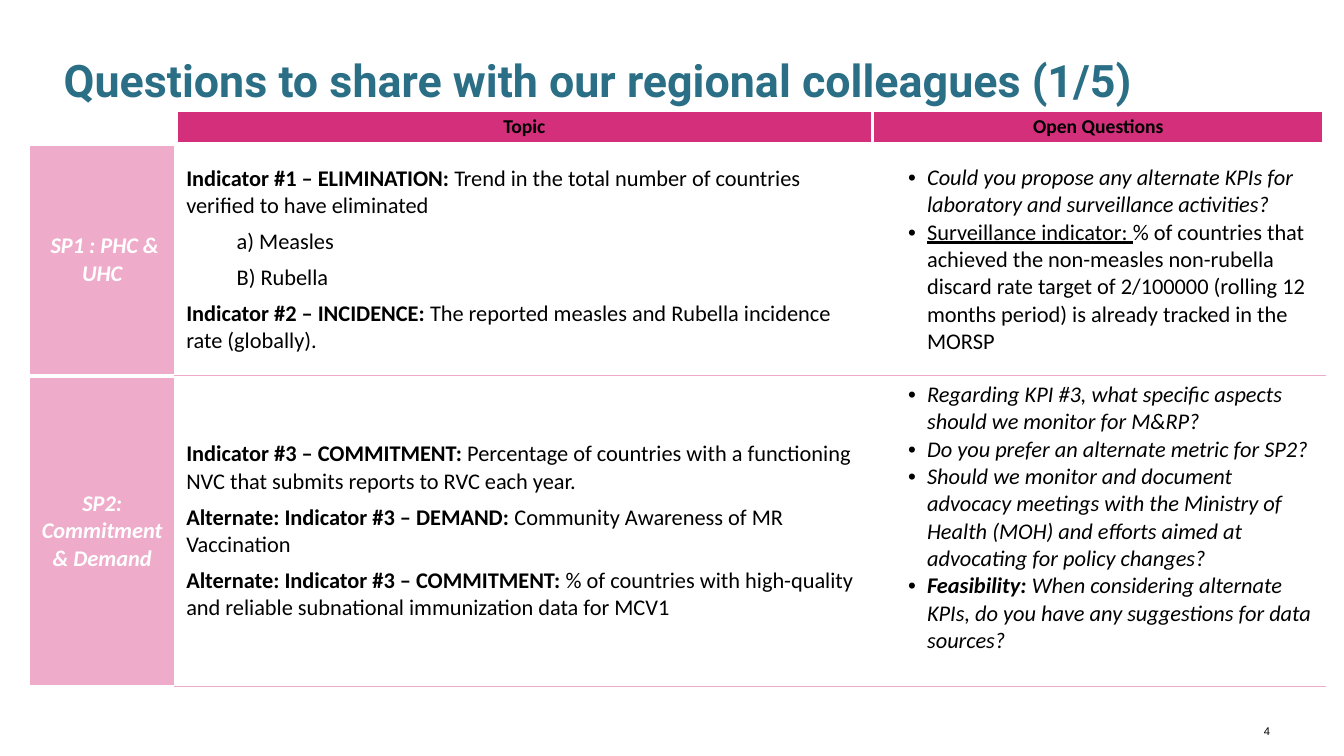
from dataclasses import dataclass
from lxml import etree
from pptx import Presentation
from pptx.dml.color import RGBColor
from pptx.enum.text import MSO_ANCHOR, MSO_AUTO_SIZE, PP_ALIGN
from pptx.oxml.ns import qn
from pptx.util import Cm, Pt

LEFT, CENTER, RIGHT = PP_ALIGN.LEFT, PP_ALIGN.CENTER, PP_ALIGN.RIGHT
MIDDLE, BOTTOM = MSO_ANCHOR.MIDDLE, MSO_ANCHOR.BOTTOM
NO_FIT = MSO_AUTO_SIZE.NONE

TITLE = "Questions to share with our regional colleagues (1/5)"
PAGE_NUMBER = "4"
HEADERS = ["Topic", "Open Questions"]
ROWS = [
    {
        "label": " SP1 : PHC & UHC",
        "topics": [
            (0, [("Indicator #1 – ELIMINATION: ", "b"),
                 ("Trend in the total number of countries verified to have eliminated", "")]),
            (1, [("a) Measles", "")]),
            (1, [("B) Rubella", "")]),
            (0, [("Indicator #2 – INCIDENCE: ", "b"),
                 ("The reported measles and Rubella incidence rate (globally).", "")]),
        ],
        "questions": [
            [("Could you propose any alternate KPIs for laboratory and surveillance activities?", "i")],
            [("Surveillance indicator: ", "u"),
             ("% of countries that achieved the non-measles non-rubella discard rate target of "
              "2/100000 (rolling 12 months period) is already tracked in the MORSP", "")],
        ],
    },
    {
        "label": "SP2: Commitment & Demand",
        "topics": [
            (0, [("Indicator #3 – COMMITMENT: ", "b"),
                 ("Percentage of countries with a functioning  NVC that submits reports to RVC each year.", "")]),
            (0, [("Alternate: Indicator #3 – DEMAND: ", "b"),
                 ("Community Awareness of MR Vaccination", "")]),
            (0, [("Alternate: Indicator #3 – COMMITMENT: ", "b"),
                 ("% of countries with high-quality and reliable subnational immunization data for MCV1", "")]),
        ],
        "questions": [
            [("Regarding KPI #3, what specific aspects should we monitor for M&RP?", "i")],
            [("Do you prefer an alternate metric for SP2?", "i")],
            [("Should we monitor and document advocacy meetings with the Ministry of Health (MOH) "
              "and efforts aimed at advocating for policy changes?", "i")],
            [("Feasibility: ", "bi"),
             ("When considering alternate KPIs, do you have any suggestions for data sources?", "i")],
        ],
    },
]


@dataclass(frozen=True)
class Theme:
    title: str = "2B6F86"
    header: str = "D42F7B"
    label: str = "EEACCA"
    text: str = "000000"
    white: str = "FFFFFF"
    title_font: str = "Roboto"
    body_font: str = "Calibri"
    number_font: str = "Arial"
    title_size: int = 32
    header_size: int = 14
    body_size: int = 16
    number_size: int = 8


T = Theme()
WHITE_LINE, PINK_LINE = (T.white, 3), (T.label, 1)
COLUMNS = [Cm(3.73), Cm(17.55), Cm(11.38)]
HEIGHTS = [Cm(0.86), Cm(5.84), Cm(7.82)]


def add_run(p, text, marks="", size=T.body_size, color=T.text, font=T.body_font):
    r = p.add_run()
    r.text = text
    f = r.font
    f.name, f.size = font, Pt(size)
    f.color.rgb = RGBColor.from_string(color)
    f.bold, f.italic, f.underline = "b" in marks, "i" in marks, "u" in marks


def next_paragraph(tf, first):
    return tf.paragraphs[0] if first else tf.add_paragraph()


def indent(p, left, hanging=0, bullet=False):
    pPr = p._p.get_or_add_pPr()
    pPr.set("marL", str(left))
    pPr.set("indent", str(-hanging))
    if bullet:
        etree.SubElement(pPr, qn("a:buFont")).set("typeface", "Arial")
        etree.SubElement(pPr, qn("a:buChar")).set("char", "•")


def style_cell(cell, fill=None, top=WHITE_LINE, bottom=WHITE_LINE):
    cell.vertical_anchor = MIDDLE
    if fill:
        cell.fill.solid()
        cell.fill.fore_color.rgb = RGBColor.from_string(fill)
    else:
        cell.fill.background()
    tcPr = cell._tc.get_or_add_tcPr()
    sides = {"L": WHITE_LINE, "R": WHITE_LINE, "T": top, "B": bottom}
    for i, (side, (color, width)) in enumerate(sides.items()):
        ln = etree.Element(qn(f"a:ln{side}"), w=str(Pt(width)))
        solid = etree.SubElement(ln, qn("a:solidFill"))
        etree.SubElement(solid, qn("a:srgbClr")).set("val", color)
        tcPr.insert(i, ln)


def fill_centered(cell, text, fill, **style):
    style_cell(cell, fill)
    p = cell.text_frame.paragraphs[0]
    p.alignment = CENTER
    add_run(p, text, **style)


def fill_topics(cell, topics):
    for i, (level, runs) in enumerate(topics):
        p = next_paragraph(cell.text_frame, i == 0)
        p.level = level
        p.space_after = Pt(6)
        indent(p, Cm(1.27) * level)
        for text, marks in runs:
            add_run(p, text, marks)


def fill_questions(cell, questions):
    for i, runs in enumerate(questions):
        p = next_paragraph(cell.text_frame, i == 0)
        indent(p, Cm(1.12), Cm(0.48), bullet=True)
        for text, marks in runs:
            add_run(p, text, marks)


def add_title(s):
    sp = s.shapes.title
    sp.left, sp.top, sp.width, sp.height = Cm(1.35), Cm(1.8), Cm(30.86), Cm(1.04)
    tf = sp.text_frame
    tf.word_wrap, tf.auto_size, tf.vertical_anchor = True, NO_FIT, BOTTOM
    p = tf.paragraphs[0]
    p.alignment, p.line_spacing = LEFT, 0.9
    add_run(p, TITLE, "b", T.title_size, T.title, T.title_font)


def add_questions_table(s):
    table = s.shapes.add_table(len(HEIGHTS), len(COLUMNS), Cm(0.71), Cm(2.77),
                               sum(COLUMNS), sum(HEIGHTS)).table
    table.horz_banding = False
    for column, width in zip(table.columns, COLUMNS):
        column.width = width
    for row, height in zip(table.rows, HEIGHTS):
        row.height = height

    corner = table.cell(0, 0)
    style_cell(corner)
    corner.margin_top = corner.margin_bottom = 0
    for c, text in enumerate(HEADERS, 1):
        fill_centered(table.cell(0, c), text, T.header, marks="b", size=T.header_size)

    for r, row in enumerate(ROWS, 1):
        label, topics, questions = (table.cell(r, c) for c in range(3))
        fill_centered(label, row["label"], T.label, marks="bi", color=T.white)
        for cell in (topics, questions):
            style_cell(cell, top=WHITE_LINE if r == 1 else PINK_LINE, bottom=PINK_LINE)
        fill_topics(topics, row["topics"])
        fill_questions(questions, row["questions"])
    questions.margin_bottom = Cm(0.8)


def add_page_number(s):
    tf = s.shapes.add_textbox(Cm(31.55), Cm(18.14), Cm(0.71), Cm(0.58)).text_frame
    tf.word_wrap, tf.vertical_anchor = True, MIDDLE
    p = tf.paragraphs[0]
    p.alignment = RIGHT
    add_run(p, PAGE_NUMBER, size=T.number_size, font=T.number_font)


def main():
    prs = Presentation()
    prs.slide_width, prs.slide_height = Cm(33.87), Cm(19.05)
    s = prs.slides.add_slide(prs.slide_layouts[5])
    add_questions_table(s)
    add_page_number(s)
    add_title(s)
    prs.save("out.pptx")


if __name__ == "__main__":
    main()
